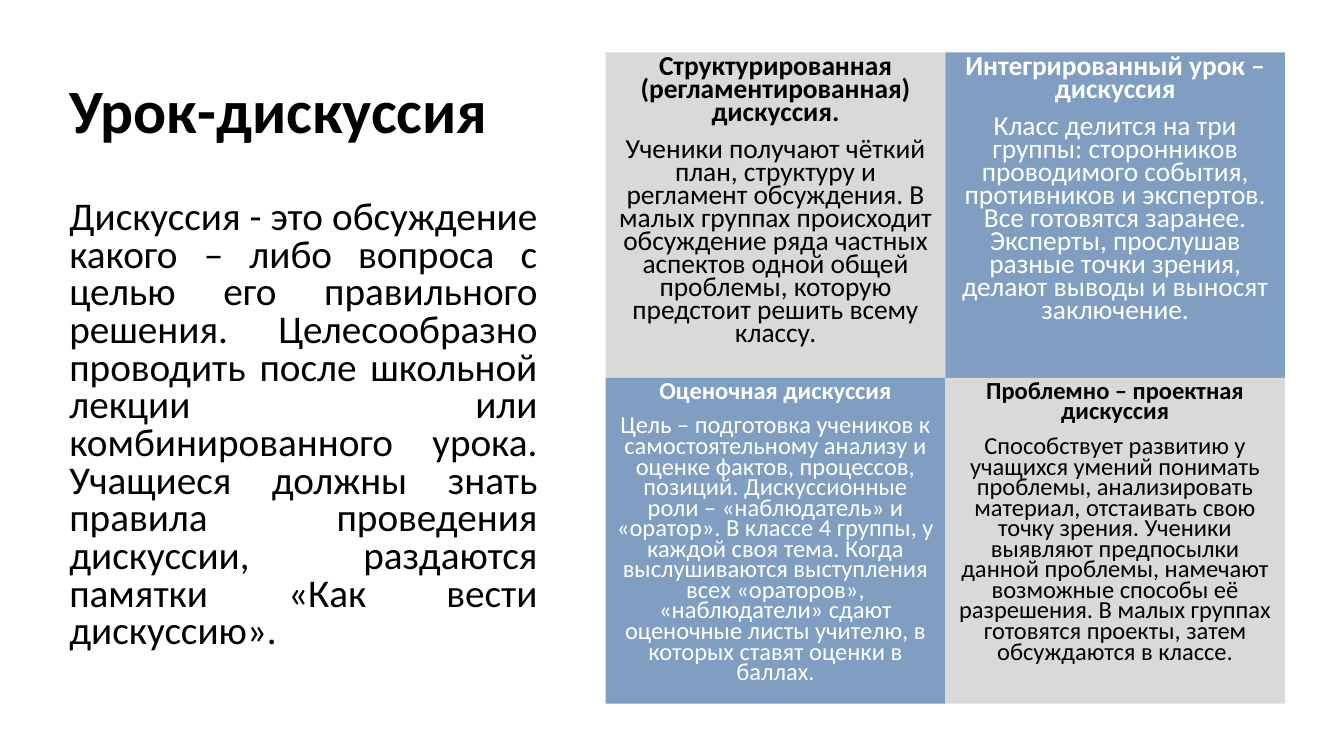
from dataclasses import dataclass

from pptx import Presentation
from pptx.dml.color import RGBColor
from pptx.enum.shapes import MSO_SHAPE
from pptx.enum.text import MSO_ANCHOR as Anchor, PP_ALIGN as Align
from pptx.shapes.autoshape import Shape
from pptx.slide import Slide
from pptx.util import Pt

COLORS = {"blue": "809EC2", "grey": "D9D9D9", "black": "000000", "white": "FFFFFF"}
FONT = "Calibri"
GRID_LEFT, GRID_TOP = 432.7, 37.4
CARD_W, CARD_H = 242.6, 232.6
TEXT_LEFT, TEXT_W = 42.5, 348.5


@dataclass(frozen=True)
class Para:
    text: str
    size: float
    color: str = "black"
    bold: bool = False
    align: Align = Align.LEFT
    spacing: float = 1.0


@dataclass(frozen=True)
class Card:
    heading: str
    body: str


@dataclass(frozen=True)
class TextBlock:
    top: float
    height: float
    anchor: Anchor
    para: Para


CARDS = [
    Card("Структурированная (регламентированная) дискуссия.",
         "Ученики получают чёткий план, структуру и регламент обсуждения. "
         "В малых группах происходит обсуждение ряда частных аспектов одной "
         "общей проблемы, которую предстоит решить всему классу."),
    Card("Интегрированный урок – дискуссия",
         "Класс делится на три группы: сторонников проводимого события, "
         "противников и экспертов. Все готовятся заранее. Эксперты, прослушав "
         "разные точки зрения, делают выводы и выносят заключение."),
    Card("Оценочная дискуссия",
         "Цель – подготовка учеников к самостоятельному анализу и оценке "
         "фактов, процессов, позиций. Дискуссионные роли – «наблюдатель» и "
         "«оратор». В классе 4 группы, у каждой своя тема. Когда выслушиваются "
         "выступления всех «ораторов», «наблюдатели» сдают оценочные листы "
         "учителю, в которых ставят оценки в баллах."),
    Card("Проблемно – проектная дискуссия",
         "Способствует развитию у учащихся умений понимать проблемы, "
         "анализировать материал, отстаивать свою точку зрения. Ученики "
         "выявляют предпосылки данной проблемы, намечают возможные способы её "
         "разрешения. В малых группах готовятся проекты, затем обсуждаются в "
         "классе."),
]

TEXT_BLOCKS = [
    TextBlock(28.8, 104.4, Anchor.MIDDLE,
              Para("Урок-дискуссия", 44, bold=True, spacing=0.9)),
    TextBlock(139.7, 362.9, Anchor.TOP,
              Para("Дискуссия - это обсуждение какого – либо вопроса с целью его "
                   "правильного решения. Целесообразно проводить после школьной "
                   "лекции или комбинированного урока. Учащиеся должны знать "
                   "правила проведения дискуссии, раздаются памятки «Как вести "
                   "дискуссию».", 28, align=Align.JUSTIFY, spacing=0.8)),
]


def rgb(name: str) -> RGBColor:
    return RGBColor.from_string(COLORS[name])


def write(sp: Shape, paras: list[Para], anchor: Anchor) -> None:
    tf = sp.text_frame
    tf.word_wrap = True
    tf.vertical_anchor = anchor
    for i, para in enumerate(paras):
        p = tf.add_paragraph() if i else tf.paragraphs[0]
        p.text = para.text
        p.alignment = para.align
        p.line_spacing = para.spacing
        p.space_before = Pt(10 if i else 0)
        p.font.name = FONT
        p.font.size = Pt(para.size)
        p.font.bold = para.bold
        p.font.color.rgb = rgb(para.color)


def draw_card(s: Slide, card: Card, row: int, col: int) -> None:
    """Fill one grid cell; blue cells run along the rising diagonal."""
    fill, color = ("grey", "black") if row == col else ("blue", "white")
    size = 17.5 if row else 19.6
    sp = s.shapes.add_shape(MSO_SHAPE.RECTANGLE,
                            Pt(GRID_LEFT + col * CARD_W), Pt(GRID_TOP + row * CARD_H),
                            Pt(CARD_W), Pt(CARD_H))
    sp.shadow.inherit = False
    sp.fill.solid()
    sp.fill.fore_color.rgb = rgb(fill)
    sp.line.fill.background()
    write(sp, [Para(card.heading, size, color, True, Align.CENTER, 0.7),
               Para(card.body, size, color, False, Align.CENTER, 0.7)], Anchor.TOP)


def draw_text_block(s: Slide, block: TextBlock) -> None:
    sp = s.shapes.add_textbox(Pt(TEXT_LEFT), Pt(block.top), Pt(TEXT_W), Pt(block.height))
    write(sp, [block.para], block.anchor)


def main() -> None:
    prs = Presentation()
    prs.slide_width, prs.slide_height = Pt(960), Pt(540)
    s = prs.slides.add_slide(prs.slide_layouts[6])
    for i, card in enumerate(CARDS):
        draw_card(s, card, *divmod(i, 2))
    for block in TEXT_BLOCKS:
        draw_text_block(s, block)
    prs.save("out.pptx")


if __name__ == "__main__":
    main()
